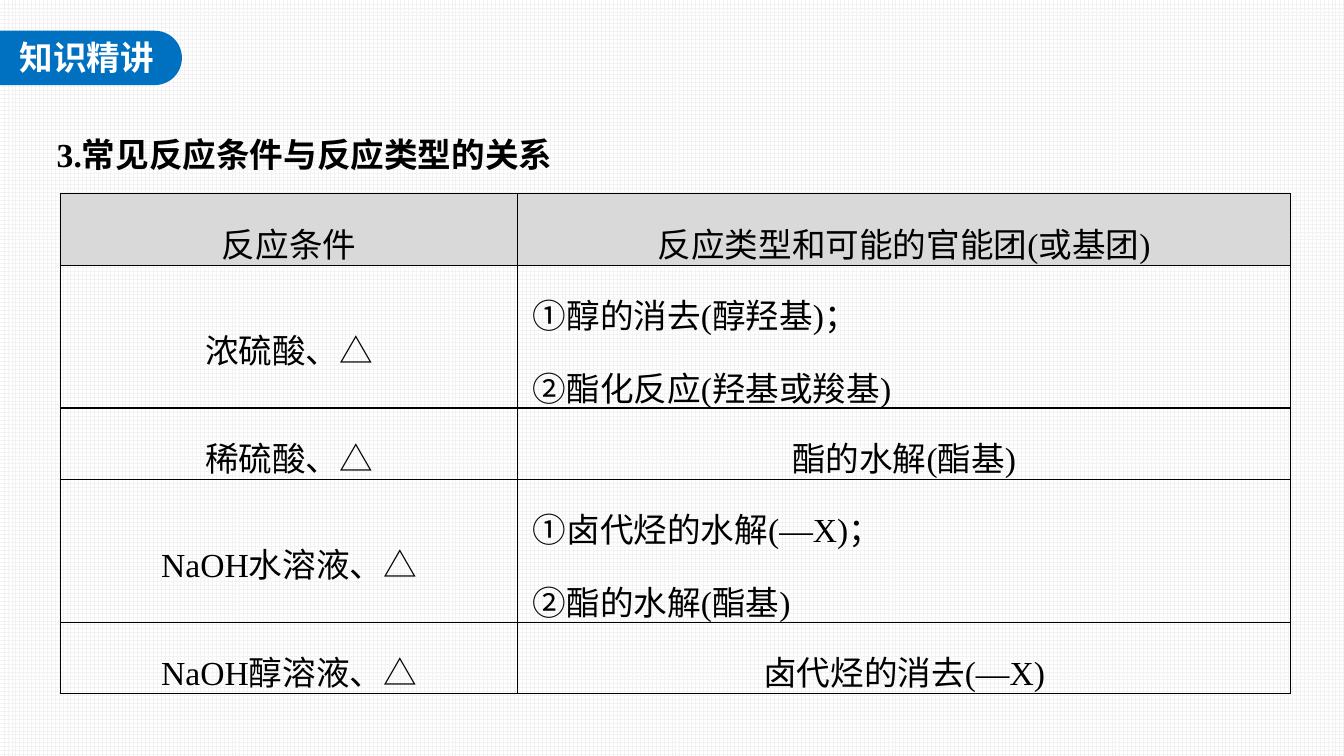
from itertools import groupby

from lxml import etree
from pptx import Presentation
from pptx.dml.color import RGBColor
from pptx.enum.dml import MSO_PATTERN
from pptx.enum.shapes import MSO_SHAPE
from pptx.enum.text import MSO_ANCHOR, MSO_AUTO_SIZE, PP_ALIGN
from pptx.oxml.ns import qn
from pptx.util import Cm, Pt

GRID = MSO_PATTERN.LARGE_GRID
TAB = MSO_SHAPE.ROUND_2_SAME_RECTANGLE
TOP, MID = MSO_ANCHOR.TOP, MSO_ANCHOR.MIDDLE
GROW = MSO_AUTO_SIZE.SHAPE_TO_FIT_TEXT
LEFT, CENTER, JUST = PP_ALIGN.LEFT, PP_ALIGN.CENTER, PP_ALIGN.JUSTIFY

HEAD = "3.常见反应条件与反应类型的关系"
ROWS = [
    ("反应条件", "反应类型和可能的官能团(或基团)"),
    ("浓硫酸、△", "①醇的消去(醇羟基)；\n②酯化反应(羟基或羧基)"),
    ("稀硫酸、△", "酯的水解(酯基)"),
    ("NaOH水溶液、△", "①卤代烃的水解(—X)；\n②酯的水解(酯基)"),
    ("NaOH醇溶液、△", "卤代烃的消去(—X)"),
]
WIDTHS = (11.53, 19.47)
LINE = 1.8
SIGNS = "①②△"
CJK = "Noto Sans CJK SC"


def color(code):
    return RGBColor.from_string(code)


def write(frame, text, font="Times New Roman", size=24, ink="000000",
          bold=False, align=LEFT, space=1.5, inset=0):
    """Fill a text frame, one paragraph a line, with signs in the CJK font."""
    for i, line in enumerate(text.split("\n")):
        para = frame.paragraphs[0] if i == 0 else frame.add_paragraph()
        para.alignment, para.line_spacing = align, space
        if inset:
            props = para._p.get_or_add_pPr()
            props.set("marL", str(Cm(inset)))
            props.set("indent", "0")
        for sign, chars in groupby(line, lambda char: char in SIGNS):
            run = para.add_run()
            run.text = "".join(chars)
            run.font.name = CJK if sign else font
            run.font.size, run.font.bold = Pt(size), bold
            run.font.color.rgb = color(ink)
            east = etree.SubElement(run.font._element, qn("a:ea"))
            east.set("typeface", CJK)


class Deck:
    def __init__(self):
        self.blue, self.gray, self.ink = "0070C0", "D9D9D9", "000000"
        self.prs = Presentation()
        self.prs.slide_width, self.prs.slide_height = Cm(33.87), Cm(19.05)
        self.slide = self.prs.slides.add_slide(self.prs.slide_layouts[5])

    def back(self):
        fill = self.slide.background.fill
        fill.patterned()
        fill.pattern = GRID
        fill.fore_color.rgb, fill.back_color.rgb = color("F2F2F2"), color("FFFFFF")

    def tag(self, text):
        tab = self.slide.shapes.add_shape(TAB, Cm(1.6), Cm(-0.84), Cm(1.37), Cm(4.6))
        tab.rotation = 90
        tab.adjustments[0], tab.adjustments[1] = 0.5, 0
        tab.shadow.inherit = False
        tab.fill.solid()
        tab.fill.fore_color.rgb = color(self.blue)
        tab.line.fill.background()
        box = self.slide.shapes.add_textbox(Cm(0.25), Cm(0.81), Cm(3.94), Cm(1.27))
        box.text_frame.word_wrap = False
        box.text_frame.auto_size = GROW
        write(box.text_frame, text, font="Arial", ink="FFFFFF", bold=True, space=1)

    def title(self, text):
        head = self.slide.shapes.title
        head.left, head.top, head.width, head.height = Cm(1.1), Cm(2.7), Cm(31.7), Cm(1.68)
        frame = head.text_frame
        frame.margin_left = frame.margin_right = Cm(0.33)
        frame.margin_top = frame.margin_bottom = Cm(0.17)
        frame.vertical_anchor, frame.word_wrap = TOP, True
        frame.auto_size = GROW
        write(frame, text, bold=True, align=JUST)

    def edge(self, cell):
        """Draw a thin line on all four sides of a cell."""
        props = cell._tc.get_or_add_tcPr()
        for side in ("lnL", "lnR", "lnT", "lnB"):
            line = etree.SubElement(props, qn("a:" + side), w=str(Pt(1)))
            fill = etree.SubElement(line, qn("a:solidFill"))
            etree.SubElement(fill, qn("a:srgbClr"), val=self.ink)

    def table(self, rows):
        lines = [max(text.count("\n") + 1 for text in row) for row in rows]
        grid = self.slide.shapes.add_table(
            len(rows), len(WIDTHS), Cm(1.52), Cm(4.88),
            Cm(sum(WIDTHS)), Cm(LINE * sum(lines))).table
        grid.first_row = grid.horz_banding = False
        for col, width in zip(grid.columns, WIDTHS):
            col.width = Cm(width)
        for r, row in enumerate(rows):
            grid.rows[r].height = Cm(LINE * lines[r])
            for c, text in enumerate(row):
                self.cell(grid.cell(r, c), text, r == 0)

    def cell(self, cell, text, head):
        cell.margin_left = cell.margin_right = Cm(0.18)
        cell.margin_top = cell.margin_bottom = 0
        cell.vertical_anchor = MID
        self.edge(cell)
        if head:
            cell.fill.solid()
            cell.fill.fore_color.rgb = color(self.gray)
        else:
            cell.fill.background()
        many = "\n" in text
        write(cell.text_frame, text, align=LEFT if many else CENTER,
              inset=0.2 if many else 0)


def main():
    deck = Deck()
    deck.back()
    deck.tag("知识精讲")
    deck.title(HEAD)
    deck.table(ROWS)
    deck.prs.save("out.pptx")


if __name__ == "__main__":
    main()
